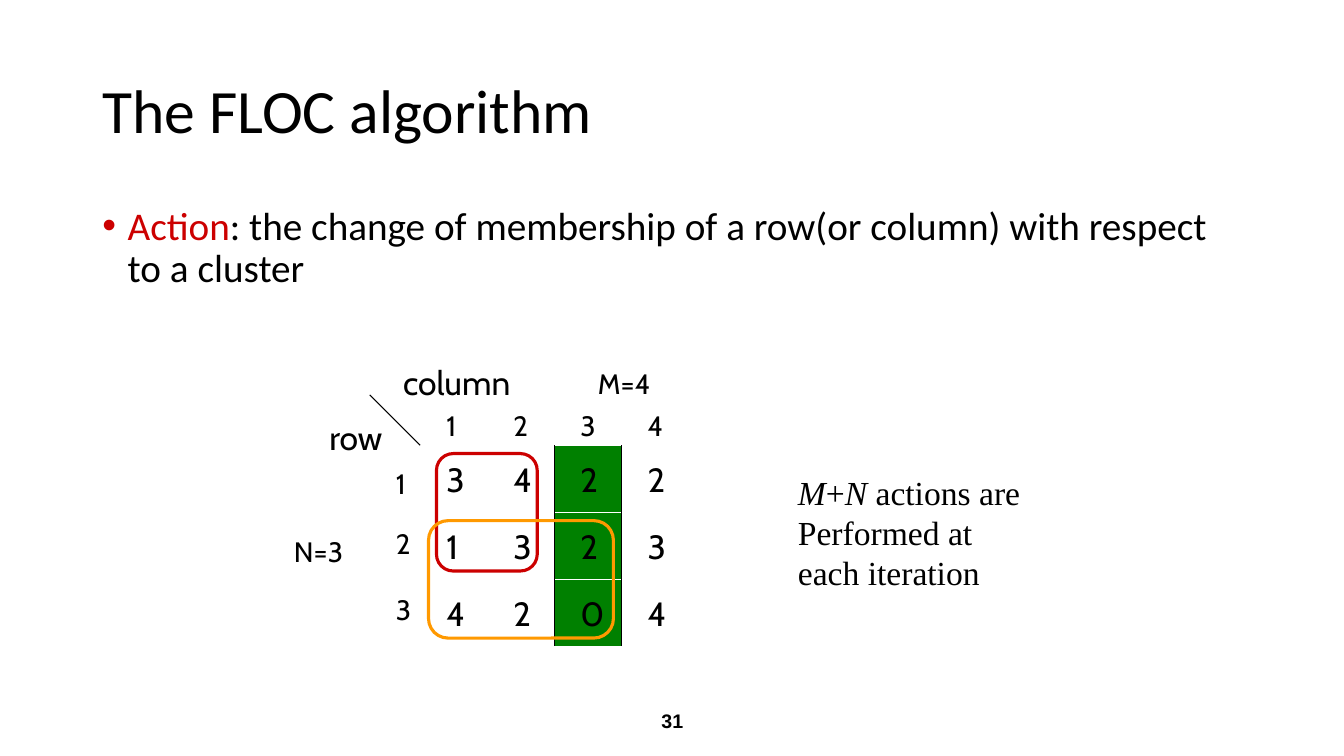
from lxml.etree import SubElement
from pptx import Presentation
from pptx.dml.color import RGBColor
from pptx.enum.shapes import MSO_CONNECTOR as MC, MSO_SHAPE as MS
from pptx.enum.text import MSO_ANCHOR as MA, MSO_AUTO_SIZE as MAS, PP_ALIGN as PA
from pptx.oxml.ns import qn
from pptx.util import Cm, Pt

BLACK, WHITE, GREEN, RED, ORANGE = "000000", "FFFFFF", "008000", "CC0000", "FF9900"
CELL, LEFT, TOP = 1.69, 10.59, 11.22
DIGIT_LEFT, DIGIT_TOP = 11, 11.43
MATRIX = ["3422", "1323", "4204"]
ROW_LABEL_TOPS = [11.63, 13.13, 14.81]


def rgb(color):
    """Turn a hex string into a colour."""
    return RGBColor.from_string(color)


def format_run(r, size, font, color=BLACK, bold=False, italic=False):
    """Set the font of one run."""
    r.font.size, r.font.name = Pt(size), font
    r.font.bold, r.font.italic = bold, italic
    r.font.color.rgb = rgb(color)


def add_text(s, x, y, w, h, text, size, font="Cabin", wrap=False):
    """Add a text box, one paragraph per line of text."""
    tf = s.shapes.add_textbox(Cm(x), Cm(y), Cm(w), Cm(h)).text_frame
    tf.text = text
    tf.word_wrap = wrap
    tf.auto_size = MAS.NONE if wrap else MAS.SHAPE_TO_FIT_TEXT
    for p in tf.paragraphs:
        for r in p.runs:
            format_run(r, size, font)
    return tf


def add_box(s, kind, x, y, w, h, line, width, fill=None):
    """Add an outlined shape, filled on request."""
    sp = s.shapes.add_shape(kind, Cm(x), Cm(y), Cm(w), Cm(h))
    sp.shadow.inherit = False
    if fill:
        sp.fill.solid()
        sp.fill.fore_color.rgb = rgb(fill)
    else:
        sp.fill.background()
    sp.line.color.rgb = rgb(line)
    sp.line.width = Pt(width)
    return sp


def add_line(s, x1, y1, x2, y2, color):
    """Add a thin straight line without a shadow."""
    cx = s.shapes.add_connector(MC.STRAIGHT, Cm(x1), Cm(y1), Cm(x2), Cm(y2))
    cx.line.color.rgb = rgb(color)
    cx.line.width = Pt(0.75)
    SubElement(cx._element.spPr, qn("a:effectLst"))
    return cx


def add_title(s, text):
    """Place and format the title."""
    sp = s.shapes.title
    sp.left, sp.top, sp.width, sp.height = Cm(2.33), Cm(1.02), Cm(29.21), Cm(3.68)
    tf = sp.text_frame
    tf.text = text
    tf.vertical_anchor, tf.auto_size = MA.MIDDLE, MAS.NONE
    p = tf.paragraphs[0]
    p.alignment, p.line_spacing = PA.LEFT, 0.9
    format_run(p.runs[0], 44, "Calibri")


def add_definition(s, term, meaning):
    """Add the bulleted definition with its term in red."""
    tf = add_text(s, 2.33, 5.08, 29.21, 12.09, term, 28, "Calibri", wrap=True)
    p = tf.paragraphs[0]
    p.line_spacing, p.space_before = 0.9, Pt(10)
    p.runs[0].font.color.rgb = rgb(RED)
    r = p.add_run()
    r.text = meaning
    format_run(r, 28, "Calibri")
    pPr = p._p.get_or_add_pPr()
    pPr.set("marL", str(Cm(0.64)))
    pPr.set("indent", str(-Cm(0.64)))
    SubElement(pPr, qn("a:buFont")).set("typeface", "Arial")
    SubElement(pPr, qn("a:buChar")).set("char", "•")


def add_grid(s):
    """Draw the matrix frame, its rules and the highlighted column."""
    w, h = 4 * CELL, 3 * CELL
    add_box(s, MS.RECTANGLE, LEFT + 2 * CELL, TOP, CELL, h, WHITE, 0.75, GREEN)
    grid = add_box(s, MS.RECTANGLE, LEFT, TOP, w, h, WHITE, 0.75)
    for i in (1, 2):
        y = TOP + i * CELL
        add_line(s, LEFT, y, LEFT + w, y, WHITE)
    for i, color in ((1, WHITE), (3, BLACK), (2, BLACK)):
        x = LEFT + i * CELL
        cx = add_line(s, x, TOP, x, TOP + h, color)
        if i == 2:
            cx.begin_connect(grid, 0)
            cx.end_connect(grid, 2)


def add_numbers(s):
    """Write the matrix values and the row and column numbers."""
    for i, values in enumerate(MATRIX):
        for j, value in enumerate(values):
            add_text(s, DIGIT_LEFT + j * CELL, DIGIT_TOP + i * CELL, 0.97, 1.27, value, 24)
    for j in range(4):
        add_text(s, DIGIT_LEFT + j * CELL, 10.16, 0.89, 1.09, str(j + 1), 20)
    for i, y in enumerate(ROW_LABEL_TOPS):
        add_text(s, 9.73, y, 0.89, 1.09, str(i + 1), 20)


def add_axes(s):
    """Name the axes and give their sizes."""
    add_line(s, LEFT, TOP, LEFT - 1.27, TOP - 1.27, BLACK)
    add_text(s, 9.91, 8.99, 3.5, 1.27, "column", 24)
    add_text(s, 8.05, 10.37, 2, 1.27, "row", 24)
    add_text(s, 7.16, 13.35, 2, 1.09, "N=3", 20)
    add_text(s, 14.82, 9.1, 2.1, 1.09, "M=4", 20)


def add_clusters(s):
    """Outline the two clusters."""
    add_box(s, MS.ROUNDED_RECTANGLE, 11, 11.43, 2.54, 2.96, RED, 2.25)
    add_box(s, MS.ROUNDED_RECTANGLE, 10.8, 13.12, 4.66, 2.96, ORANGE, 2.25)


def add_remark(s):
    """Add the remark on the number of actions."""
    font = "Times New Roman"
    tf = add_text(s, 19.86, 11.76, 6.17, 3.33, "M\nPerformed at\neach iteration", 24, font)
    p = tf.paragraphs[0]
    p.runs[0].font.italic = True
    for text, italic in (("+", False), ("N", True), (" actions are", False)):
        r = p.add_run()
        r.text = text
        format_run(r, 24, font, italic=italic)


def add_page_number(s, number):
    """Add the centred page number."""
    tf = add_text(s, 11.23, 17.65, 11.43, 1.02, number, 14, "Arial", wrap=True)
    tf.vertical_anchor = MA.MIDDLE
    p = tf.paragraphs[0]
    p.alignment = PA.CENTER
    p.runs[0].font.bold = True


def main():
    """Build the slide and save it."""
    prs = Presentation()
    prs.slide_width, prs.slide_height = Cm(33.87), Cm(19.05)
    s = prs.slides.add_slide(prs.slide_layouts[5])
    add_title(s, "The FLOC algorithm")
    add_definition(s, "Action", ": the change of membership of a row(or column) "
                   "with respect to a cluster")
    add_grid(s)
    add_numbers(s)
    add_axes(s)
    add_clusters(s)
    add_remark(s)
    add_page_number(s, "31")
    prs.save("out.pptx")


if __name__ == "__main__":
    main()
